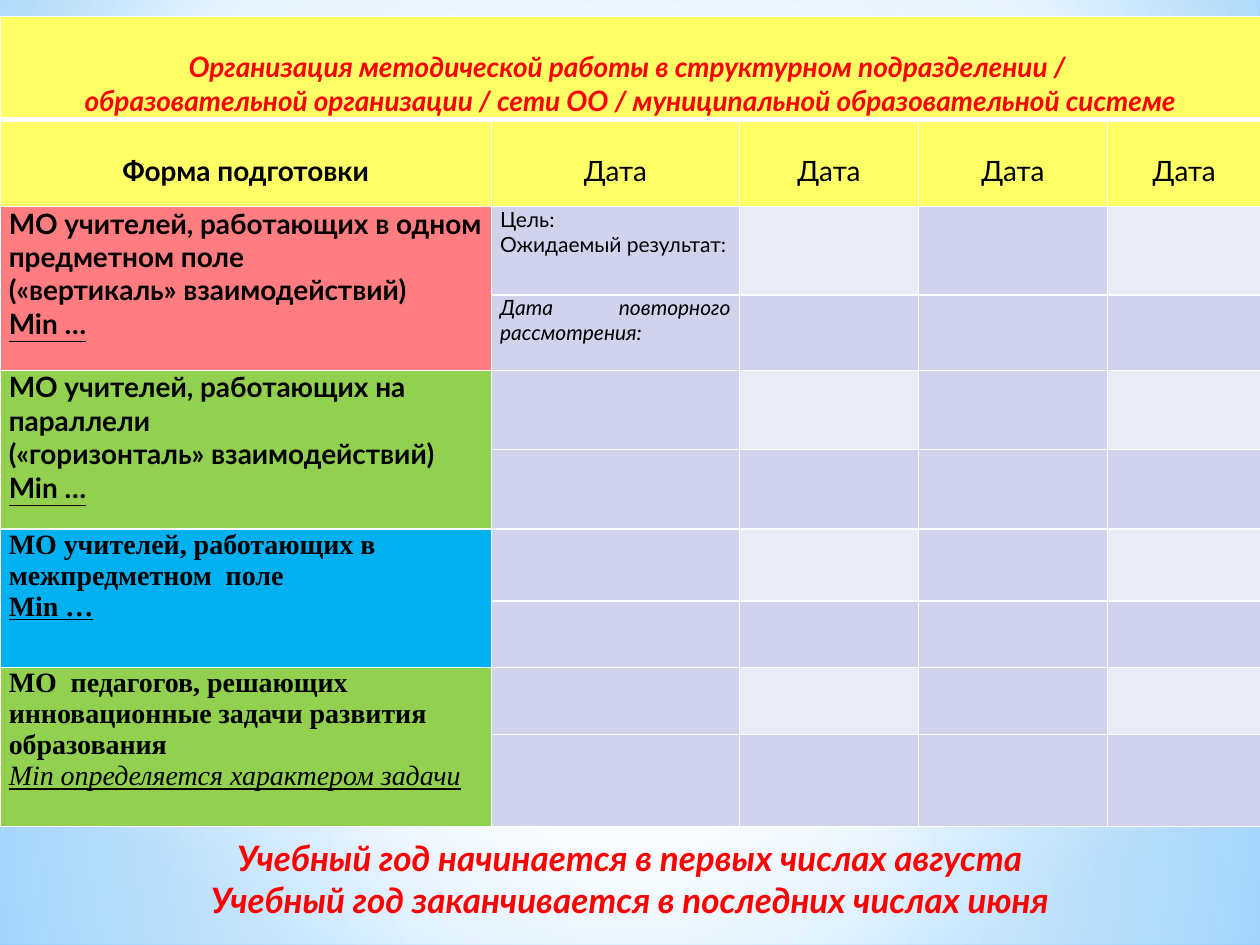
from lxml import etree
from pptx import Presentation
from pptx.dml.color import RGBColor
from pptx.enum import shapes, text
from pptx.oxml import parse_xml
from pptx.oxml.ns import nsdecls, qn
from pptx.util import Inches, Pt

RED = RGBColor(0xFF, 0x00, 0x00)
BLACK = RGBColor(0x00, 0x00, 0x00)
WHITE = RGBColor(0xFF, 0xFF, 0xFF)
YELLOW = RGBColor(0xFF, 0xFF, 0x66)
CORAL = RGBColor(0xFF, 0x7C, 0x80)
GREEN = RGBColor(0x92, 0xD0, 0x50)
BLUE = RGBColor(0x00, 0xB0, 0xF0)
BAND = RGBColor(0xD0, 0xD3, 0xEB)
PALE = RGBColor(0xE9, 0xEB, 0xF5)
SKY = RGBColor(0xB4, 0xDC, 0xFA)
SKY_MID = RGBColor(0x9E, 0xD5, 0xFF)
SKY_DEEP = RGBColor(0x5B, 0xB9, 0xFF)

SANS, SERIF = "Lato", "Times New Roman"
CENTER, LEFT, JUSTIFY = (text.PP_ALIGN.CENTER, text.PP_ALIGN.LEFT,
                         text.PP_ALIGN.JUSTIFY)
MIDDLE = (50, 50, 50, 50)

COLS = [3.9, 1.97, 1.42, 1.5, 1.22]
ROWS = [0.82, 0.69, 0.7, 0.6, 0.63, 0.63, 0.57, 0.53, 0.53, 0.73]
HEADERS = ["Форма подготовки"] + ["Дата"] * 4
# Fill, font, lines in bold, closing line, format of the closing line
FORMS = [
    (CORAL, SANS, ["МО учителей, работающих в одном предметном поле",
                   "(«вертикаль» взаимодействий)"],
     "Min …", dict(bold=True)),
    (GREEN, SANS, ["МО учителей, работающих на параллели",
                   "(«горизонталь» взаимодействий)"],
     "Min …", dict(bold=True)),
    (BLUE, SERIF, ["МО учителей, работающих в межпредметном  поле"],
     "Min …", dict(bold=True)),
    (GREEN, SERIF, ["МО  педагогов, решающих  инновационные задачи развития "
                    "образования"],
     "Min определяется характером задачи", dict(italic=True)),
]


def set_gradient(element, stops, center=None, angle=0):
    """Replace the element's empty fill; stops are (position, colour, opacity) in %."""
    grad = parse_xml(f'<a:gradFill {nsdecls("a")} rotWithShape="1"><a:gsLst/></a:gradFill>')
    for pos, color, opacity in stops:
        gs = etree.SubElement(grad[0], qn("a:gs"), pos=str(pos * 1000))
        clr = etree.SubElement(gs, qn("a:srgbClr"), val=str(color))
        if opacity < 100:
            etree.SubElement(clr, qn("a:alpha"), val=str(opacity * 1000))
    if center:
        shade = etree.SubElement(grad, qn("a:path"), {"path": "circle"})
        etree.SubElement(shade, qn("a:fillToRect"),
                         {k: str(v * 1000) for k, v in zip("ltrb", center)})
    else:
        etree.SubElement(grad, qn("a:lin"), ang=str(angle * 60000), scaled="0")
    empty = element.find(".//" + qn("a:noFill"))
    empty.getparent().replace(empty, grad)


def add_glow(slide, kind, box, stops, **direction):
    sp = slide.shapes.add_shape(kind, *map(Inches, box))
    sp.shadow.inherit = False
    sp.fill.background()
    set_gradient(sp._element, stops, **direction)
    sp.line.fill.background()


def add_backdrop(slide, width, height):
    slide.background.fill.background()
    set_gradient(slide._element, [(0, SKY_MID, 100), (60, WHITE, 100),
                                  (100, SKY_DEEP, 100)], center=(20, 10, 20, 60))
    rect, oval = shapes.MSO_SHAPE.RECTANGLE, shapes.MSO_SHAPE.OVAL
    horizon = 5.58
    add_glow(slide, rect, (0, horizon, width, height - horizon),
             [(0, WHITE, 91), (37, WHITE, 76), (100, SKY, 79)], center=MIDDLE)
    add_glow(slide, rect, (0, 0, width, horizon),
             [(0, WHITE, 89), (48, WHITE, 62), (100, SKY, 79)], center=MIDDLE)
    add_glow(slide, rect, (0, 4.12, width, 2.5),
             [(0, WHITE, 0), (29, WHITE, 30), (45, SKY, 40), (55, WHITE, 26),
              (65, SKY, 60), (100, WHITE, 0)], angle=90)
    add_glow(slide, oval, (0, 1.75, width, horizon),
             [(0, WHITE, 100), (56, WHITE, 0)], center=MIDDLE)


def add_run(p, words, size=16, font=SANS, color=BLACK, bold=False, italic=False,
            underline=False):
    r = p.add_run()
    r.text = words
    f = r.font
    f.size, f.name, f.color.rgb = Pt(size), font, color
    f.bold, f.italic, f.underline = bold, italic, underline


def write_cell(cell, lines, align=LEFT, top=0):
    """Lines are (words, format) pairs, one paragraph each."""
    cell.margin_left = cell.margin_right = Inches(0.07)
    cell.margin_top, cell.margin_bottom = Inches(top), 0
    tf = cell.text_frame
    for i, (words, style) in enumerate(lines):
        p = tf.add_paragraph() if i else tf.paragraphs[0]
        p.alignment = align
        add_run(p, words, **style)


def style_cell(cell, color, bottom=1):
    tc_pr = cell._tc.get_or_add_tcPr()
    for side, width in zip("LRTB", (1, 1, 1, bottom)):
        tc_pr.append(parse_xml(
            f'<a:ln{side} {nsdecls("a")} w="{Pt(width)}"><a:solidFill>'
            f'<a:srgbClr val="{WHITE}"/></a:solidFill></a:ln{side}>'))
    cell.fill.solid()
    cell.fill.fore_color.rgb = color


def cell_color(row, col):
    if row < 2:
        return YELLOW
    if col == 0:
        return FORMS[(row - 2) // 2][0]
    return PALE if row % 2 == 0 and col % 2 == 0 else BAND


def add_schedule(slide, box):
    table = slide.shapes.add_table(len(ROWS), len(COLS), *map(Inches, box)).table
    for col, width in zip(table.columns, COLS):
        col.width = Inches(width)
    for row, height in zip(table.rows, ROWS):
        row.height = Inches(height)
    for r in range(len(ROWS)):
        for c in range(len(COLS)):
            style_cell(table.cell(r, c), cell_color(r, c), bottom=1 if r else 3)

    table.cell(0, 0).merge(table.cell(0, len(COLS) - 1))
    heading = dict(color=RED, bold=True, italic=True)
    write_cell(table.cell(0, 0), [
        ("Организация методической работы в структурном подразделении / ", heading),
        ("образовательной организации / сети ОО / муниципальной образовательной системе",
         heading)], CENTER, top=0.27)
    for c, words in enumerate(HEADERS):
        write_cell(table.cell(1, c), [(words, dict(bold=c == 0))], CENTER, top=0.27)

    for i, (_, font, lines, closing, style) in enumerate(FORMS):
        top = 2 + 2 * i
        table.cell(top, 0).merge(table.cell(top + 1, 0))
        write_cell(table.cell(top, 0),
                   [(words, dict(font=font, bold=True)) for words in lines]
                   + [(closing, dict(font=font, underline=True, **style))])

    write_cell(table.cell(2, 1), [("Цель:", dict(size=12)),
                                  ("Ожидаемый результат:", dict(size=12))], JUSTIFY)
    write_cell(table.cell(3, 1), [("Дата повторного рассмотрения:",
                                   dict(size=12, italic=True))], JUSTIFY)


def place_title(slide, box):
    title = slide.shapes.title
    title.left, title.top, title.width, title.height = map(Inches, box)
    slide.shapes._spTree.append(title._element)  # in front of the backdrop
    tf = title.text_frame
    tf.word_wrap, tf.auto_size = True, text.MSO_AUTO_SIZE.NONE
    tf.vertical_anchor = text.MSO_ANCHOR.MIDDLE
    p = tf.paragraphs[0]
    p.alignment = CENTER
    style = dict(size=20, color=RED, bold=True, italic=True)
    add_run(p, "Учебный год начинается в первых числах августа", **style)
    p.add_line_break()
    add_run(p, "Учебный год заканчивается в последних числах июня", **style)


def main():
    prs = Presentation()
    prs.slide_width, prs.slide_height = Inches(10), Inches(7.5)
    slide = prs.slides.add_slide(prs.slide_layouts[5])
    add_backdrop(slide, 10, 7.5)
    place_title(slide, (0, 6.58, 10, 0.79))
    add_schedule(slide, (0, 0.13, 10, 6.44))
    prs.save("out.pptx")


if __name__ == "__main__":
    main()
